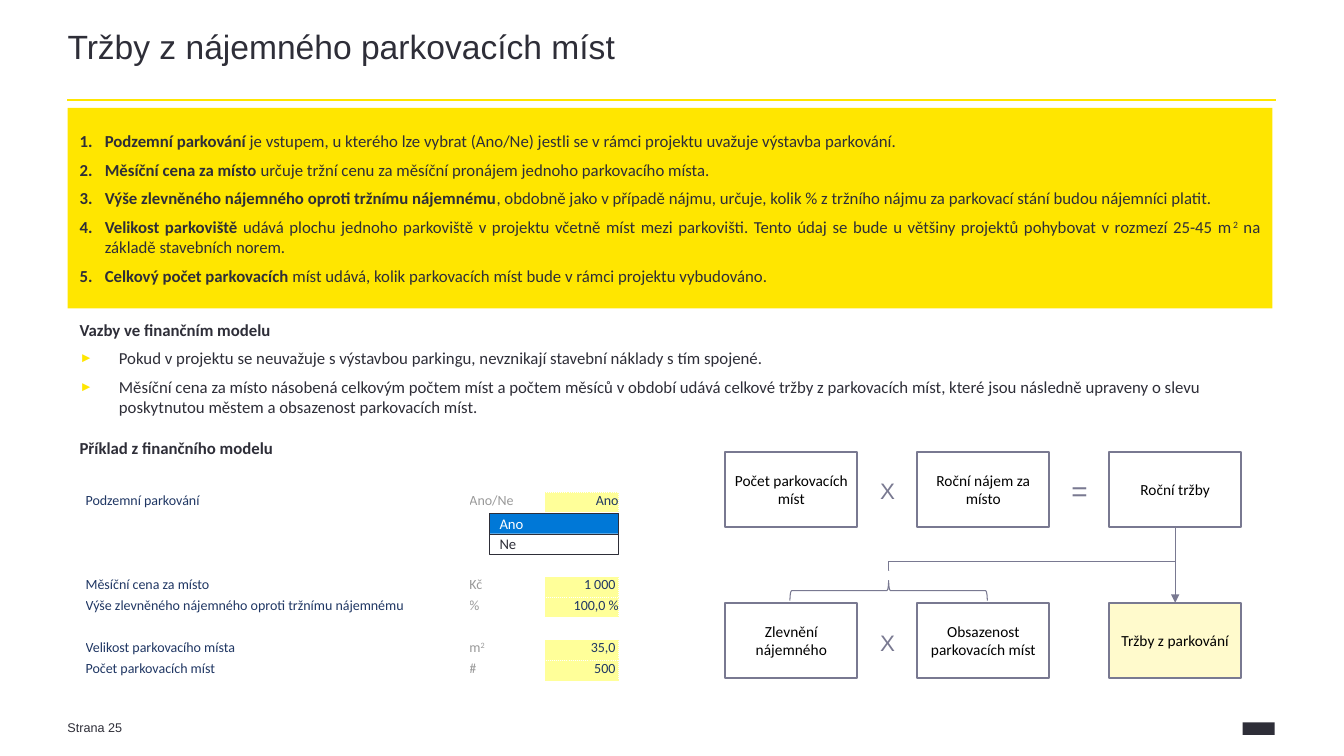
from lxml import etree
from pptx import Presentation
from pptx import util as u
from pptx.dml.color import RGBColor
from pptx.enum import shapes, text
from pptx.oxml import ns

Pt = u.Pt
HUES = {"ink": "2E2E38", "sun": "FFE600", "line": "797991", "navy": "203764",
        "grey": "999999", "input": "FFFF99", "cream": "FFFACC", "blue": "0078D7",
        "white": "FFFFFF", "black": "000000"}
LEFT, MID, RIGHT, JUST = (text.PP_ALIGN.LEFT, text.PP_ALIGN.CENTER,
                          text.PP_ALIGN.RIGHT, text.PP_ALIGN.JUSTIFY)
TOP, CENTRE = text.MSO_ANCHOR.TOP, text.MSO_ANCHOR.MIDDLE
KIND, LINK = shapes.MSO_SHAPE, shapes.MSO_CONNECTOR


def hue(name):
    return RGBColor.from_string(HUES[name])


def sub(parent, tag, **attrs):
    return etree.SubElement(parent, ns.qn(tag), attrs)


class Page:
    def __init__(self, slide, face="Calibri"):
        self.slide, self.face = slide, face

    def frame(self, shape, pads, anchor=TOP):
        tf = shape.text_frame
        tf.word_wrap, tf.auto_size = True, text.MSO_AUTO_SIZE.NONE
        tf.vertical_anchor = anchor
        tf.margin_left, tf.margin_top, tf.margin_right, tf.margin_bottom = map(Pt, pads)
        return tf

    def para(self, p, words, size, ink="ink", lead="", align=LEFT, face=None,
             mark=None, after=0):
        """Bold lead, then words; text between carets is superscript."""
        props = p._p.get_or_add_pPr()
        if mark:
            indent = Pt(18 if mark == "1." else 28.08)
            props.set("marL", str(indent))
            props.set("indent", str(-indent))
            if mark == "1.":
                sub(props, "a:buFont", typeface="+mj-lt")
                sub(props, "a:buAutoNum", type="arabicPeriod")
            else:
                sub(sub(props, "a:buClr"), "a:srgbClr", val=HUES["sun"])
                sub(props, "a:buSzPct", val="80000")
                sub(props, "a:buFont", typeface="Arial")
                sub(props, "a:buChar", char=mark)
        else:
            props.set("marL", "0")
            props.set("indent", "0")
            sub(props, "a:buNone")
        p.alignment, p.space_before, p.space_after = align, Pt(0), Pt(after)
        p.font.name, p.font.size = face or self.face, Pt(size)
        p.font.color.rgb = hue(ink)
        if lead:
            run = p.add_run()
            run.text, run.font.bold = lead, True
        for i, bit in enumerate(words.split("^")):
            if bit:
                run = p.add_run()
                run.text = bit
                if i % 2:
                    run._r.get_or_add_rPr().set("baseline", "30000")
        if not (lead or words):
            sub(p._p, "a:endParaRPr", sz=str(size * 100))

    def paint(self, shape, fill=None, edge=None, width=1.5):
        shape.shadow.inherit = False
        if fill:
            shape.fill.solid()
            shape.fill.fore_color.rgb = hue(fill)
        else:
            shape.fill.background()
        if edge:
            shape.line.color.rgb, shape.line.width = hue(edge), Pt(width)
        else:
            shape.line.fill.background()

    def holder(self, idx, spot, pads=(0, 0, 0, 0), anchor=TOP):
        shape = self.slide.placeholders[idx]
        shape.left, shape.top, shape.width, shape.height = map(Pt, spot)
        return shape, self.frame(shape, pads, anchor)

    def items(self, tf, rows):
        for i, (lead, words, mark, align) in enumerate(rows):
            p = tf.add_paragraph() if i else tf.paragraphs[0]
            self.para(p, words, 12, lead=lead, mark=mark, align=align, after=6)

    def label(self, words, spot, size, pads=(0, 2.88, 0, 0), **style):
        tf = self.frame(self.slide.shapes.add_textbox(*map(Pt, spot)), pads)
        self.para(tf.paragraphs[0], words, size, **style)
        return tf.paragraphs[0]

    def box(self, words, spot, size, pads=(2.88,) * 4, kind=KIND.RECTANGLE,
            fill=None, edge="line", width=1.5, ink="black", align=MID):
        shape = self.slide.shapes.add_shape(kind, *map(Pt, spot))
        self.paint(shape, fill, edge, width)
        if words:
            tf = self.frame(shape, pads, CENTRE)
            self.para(tf.paragraphs[0], words, size, ink, align=align)
        return shape

    def link(self, ends, kind=LINK.STRAIGHT, ink="line", width=0.75, arrow=False):
        wire = self.slide.shapes.add_connector(kind, *map(Pt, ends))
        wire.line.color.rgb, wire.line.width = hue(ink), Pt(width)
        if arrow:
            sub(wire.line._get_or_add_ln(), "a:tailEnd", type="triangle")
        sub(wire._element.spPr, "a:effectLst")
        return wire

    def grid(self, rows, spot, widths):
        table = self.slide.shapes.add_table(len(rows), len(widths), *map(Pt, spot)).table
        table.first_row = table.horz_banding = False
        for col, width in zip(table.columns, widths):
            col.width = Pt(width)
        for r, row in enumerate(rows):
            table.rows[r].height = Pt(spot[3] / len(rows))
            for c, words in enumerate(row):
                cell = table.cell(r, c)
                cell.margin_left = cell.margin_right = 0
                cell.margin_top = cell.margin_bottom = 0
                self.para(cell.text_frame.paragraphs[0], words, 10,
                          "grey" if c == 1 else "navy", align=RIGHT if c == 2 else LEFT)
                if c == 2 and words:
                    cell.fill.solid()
                    cell.fill.fore_color.rgb = hue("input")
                    self.rim(cell)
                else:
                    cell.fill.background()

    def rim(self, cell):
        props = cell._tc.get_or_add_tcPr()
        for i, side in enumerate("LRTB"):
            line = sub(props, "a:ln" + side, w=str(Pt(0.5)))
            sub(sub(line, "a:solidFill"), "a:srgbClr", val=HUES["white"])
            sub(line, "a:prstDash", val="dot")
            props.insert(i, line)


def main():
    deck = Presentation()
    deck.slide_width, deck.slide_height = Pt(960.48), Pt(540)
    page = Page(deck.slides.add_slide(deck.slide_layouts[3]))
    left, wide, pads = 48.24, 861.12, (8.64,) * 4

    # Title, rule and footer
    _, tf = page.holder(0, (left, 23.04, 864.72, 46.8))
    page.para(tf.paragraphs[0], "Tržby z nájemného parkovacích míst", 24, face="Arial")
    tf.paragraphs[0].line_spacing = 0.85
    page.link((left, 71.5, 912.24, 71.5), ink="sun", width=1.5)
    foot = page.label("Strana 25", (left, 512.64, 72, 12.24), 9, face="Arial")
    foot.line_spacing = 0.85
    page.box("", (888, 516, 23, 9), 9, fill="ink", edge=None)

    # Inputs on yellow
    panel, tf = page.holder(1, (left, 77.04, wide, 143.28), pads, CENTRE)
    panel.fill.solid()
    panel.fill.fore_color.rgb = hue("sun")
    inputs = [
        ("Podzemní parkování ", "je vstupem, u kterého lze vybrat (Ano/Ne) jestli se v rámci "
         "projektu uvažuje výstavba parkování."),
        ("Měsíční cena za místo ", "určuje tržní cenu za měsíční pronájem jednoho parkovacího místa."),
        ("Výše zlevněného nájemného oproti tržnímu nájemnému", ", obdobně jako v případě nájmu, "
         "určuje, kolik % z tržního nájmu za parkovací stání budou nájemníci platit."),
        ("Velikost parkoviště ", "udává plochu jednoho parkoviště v projektu včetně míst mezi "
         "parkovišti. Tento údaj se bude u většiny projektů pohybovat v rozmezí 25-45 m^2^ na "
         "základě stavebních norem."),
        ("Celkový počet parkovacích", " míst udává, kolik parkovacích míst bude v rámci projektu "
         "vybudováno."),
    ]
    page.items(tf, [(lead, words, "1.", JUST) for lead, words in inputs])

    # Model links
    _, tf = page.holder(2, (left, 219.6, wide, 87.12), pads)
    page.items(tf, [
        ("Vazby ve finančním modelu", "", None, JUST),
        ("", "Pokud v projektu se neuvažuje s výstavbou parkingu, nevznikají stavební náklady "
         "s tím spojené.", "►", LEFT),
        ("", "Měsíční cena za místo násobená celkovým počtem míst a počtem měsíců v období udává "
         "celkové tržby z parkovacích míst, které jsou následně upraveny o slevu poskytnutou "
         "městem a obsazenost parkovacích míst.", "►", LEFT)])

    # Model sample with its drop-down
    page.label("", (left, 303.84, wide, 31.68), 12, pads, lead="Příklad z finančního modelu")
    gap = ("", "", "")
    page.grid([("Podzemní parkování", "Ano/Ne", "Ano"), gap, gap, gap,
               ("Měsíční cena za místo", "Kč", "1 000 "),
               ("Výše zlevněného nájemného oproti tržnímu nájemnému", "%", "100,0 %"), gap,
               ("Velikost parkovacího místa", "m^2^", "35,0 "),
               ("Počet parkovacích míst", "#", "500 ")],
              (61.2, 351.36, 380.88, 135.36), (274.32, 53.28, 53.28))
    for i, (words, fill, ink) in enumerate([("Ano", "blue", "white"), ("Ne", None, "ink")]):
        page.box(words, (349.92, 366.48 + 14.76 * i, 92.16, 14.76), 10.5, (7.2, 3.6, 7.2, 3.6),
                 fill=fill, edge="ink", width=0.25, ink=ink, align=LEFT)

    # Revenue diagram
    step, size = 137.16, (94.32, 54)
    names = [["Počet parkovacích míst", "Roční nájem za místo", "Roční tržby"],
             ["Zlevnění nájemného", "Obsazenost parkovacích míst", "Tržby z parkování"]]
    nodes = {}
    for r, row in enumerate(names):
        for c, name in enumerate(row):
            spot = (518.4 + step * c, 322.56 + 108 * r, *size)
            nodes[r, c] = page.box(name, spot, 11, fill="cream" if (r, c) == (1, 2) else None)
    for sign, col, top, pt in [("X", 0, 337.68, 16), ("=", 1, 335.52, 20), ("X", 0, 446.4, 16)]:
        page.label(sign, (623.52 + step * col, top, 21.6, 27.36), pt, ink="line",
                   align=MID, face="Arial")

    # Arrow, brace and the branch between them
    arrow = page.link((840.24, 376.56, 840.24, 430.56), arrow=True)
    arrow.begin_connect(nodes[0, 2], 2)
    arrow.end_connect(nodes[1, 2], 0)
    brace = page.box("", (627.84, 351.36, 14.4, 141.12), 11, kind=KIND.LEFT_BRACE, width=0.75)
    brace.rotation = 90
    branch = page.link((635.04, 407.52, 840.24, 401.04), LINK.ELBOW)
    bend = branch._element.spPr.find(ns.qn("a:prstGeom")).get_or_add_avLst()
    sub(bend, "a:gd", name="adj1", fmla="val 100")

    deck.save("out.pptx")


if __name__ == "__main__":
    main()
